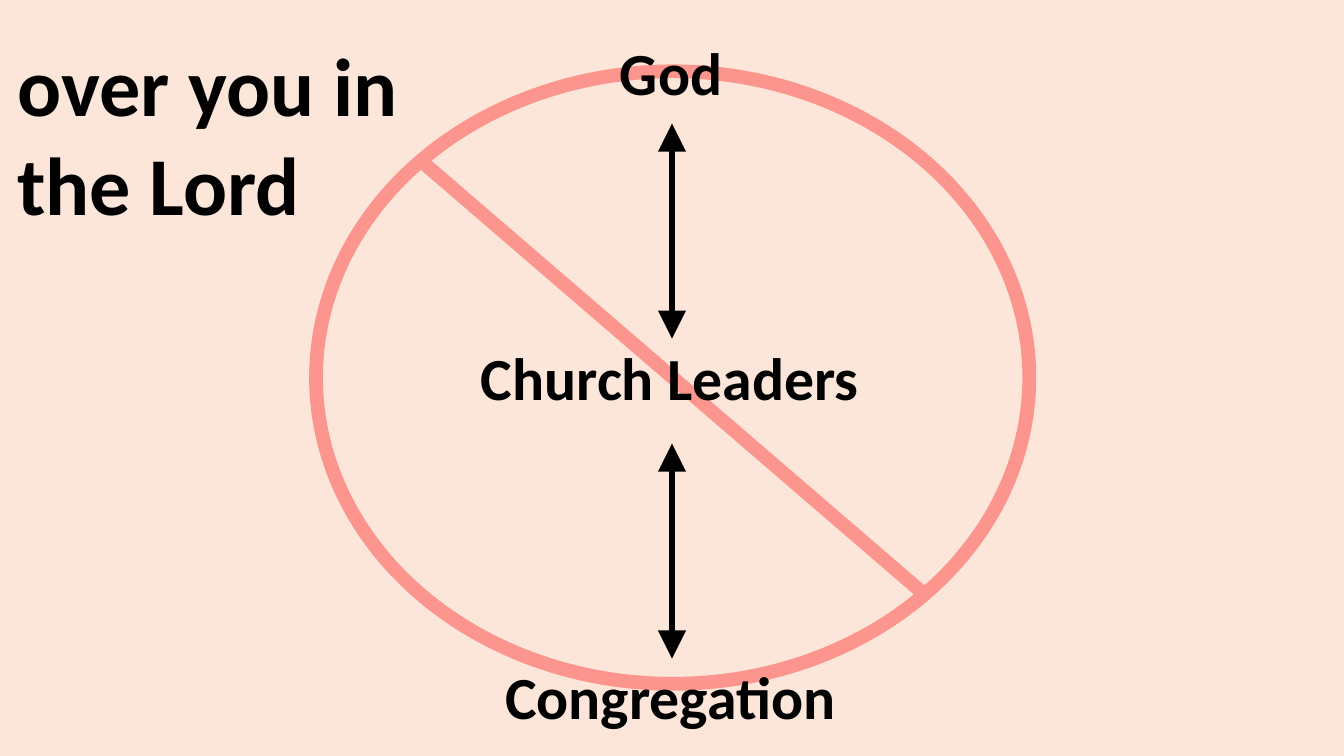
import pptx
import pptx.util
import pptx.dml.color
import pptx.enum.shapes
import pptx.enum.text
import pptx.oxml
import pptx.oxml.ns

Inches, Pt = pptx.util.Inches, pptx.util.Pt
RGBColor = pptx.dml.color.RGBColor

WIDTH = 10
HEIGHT = WIDTH * 9 / 16
CENTER = WIDTH / 2
BACKGROUND = RGBColor(0xFB, 0xE6, 0xD9)
SIGN_RED = RGBColor(0xFF, 0x00, 0x00)
BLACK = RGBColor(0x00, 0x00, 0x00)

HEADING = "over you in the Lord"
# text, top, width
OUTER_LEVELS = [("God", 0.22, 0.97), ("Congregation", 4.86, 2.68)]
MIDDLE_LEVEL = ("Church Leaders", 2.49, 3.04)
LABEL_HEIGHT = 0.64
ARROW_TOPS = [0.92, 3.3]
ARROW_LENGTH = 1.6
SIGN_BOX = (2.3, 0.48, 5.41, 4.66)


def add_child(parent, tag, **attributes):
    child = pptx.oxml.parse_xml(f"<a:{tag} {pptx.oxml.ns.nsdecls('a')}/>")
    for name, value in attributes.items():
        child.set(name, value)
    parent.append(child)


def add_sign(s):
    """Add the translucent prohibition sign."""
    sp = s.shapes.add_shape(pptx.enum.shapes.MSO_SHAPE.NO_SYMBOL,
                            *map(Inches, SIGN_BOX))
    sp.adjustments[0] = 0.022
    sp.shadow.inherit = False
    sp.line.fill.background()
    sp.fill.solid()
    sp.fill.fore_color.rgb = SIGN_RED
    color = sp._element.spPr.find(".//" + pptx.oxml.ns.qn("a:srgbClr"))
    add_child(color, "alpha", val="35000")


def add_text(s, text, box, size, wrap):
    tf = s.shapes.add_textbox(*map(Inches, box)).text_frame
    tf.word_wrap = wrap
    tf.auto_size = pptx.enum.text.MSO_AUTO_SIZE.SHAPE_TO_FIT_TEXT
    r = tf.paragraphs[0].add_run()
    r.text = text
    for name, value in {"name": "Calibri", "size": Pt(size), "bold": True}.items():
        setattr(r.font, name, value)
    r.font.color.rgb = BLACK


def add_level(s, text, top, width):
    """Add a one-line label centred on the slide."""
    add_text(s, text, (CENTER - width / 2, top, width, LABEL_HEIGHT), 32, False)


def add_arrow(s, top):
    """Add a vertical double-headed arrow on the centre line."""
    arrow = s.shapes.add_connector(
        pptx.enum.shapes.MSO_CONNECTOR.STRAIGHT,
        *map(Inches, (CENTER, top, CENTER, top + ARROW_LENGTH)))
    arrow.line.color.rgb = BLACK
    arrow.line.width = Pt(3)
    ln = arrow._element.spPr.find(pptx.oxml.ns.qn("a:ln"))
    for end in ("headEnd", "tailEnd"):
        add_child(ln, end, type="triangle", w="lg", len="lg")
    add_child(arrow._element.spPr, "effectLst")


def main():
    prs = pptx.Presentation()
    prs.slide_width, prs.slide_height = Inches(WIDTH), Inches(HEIGHT)
    s = prs.slides.add_slide(prs.slide_layouts[6])
    s.background.fill.solid()
    s.background.fill.fore_color.rgb = BACKGROUND

    add_sign(s)
    for level in OUTER_LEVELS:
        add_level(s, *level)
    for top in ARROW_TOPS:
        add_arrow(s, top)
    add_level(s, *MIDDLE_LEVEL)
    add_text(s, HEADING, (0.03, 0.21, 3.7, 1.58), 44, True)
    prs.save("out.pptx")


if __name__ == "__main__":
    main()
